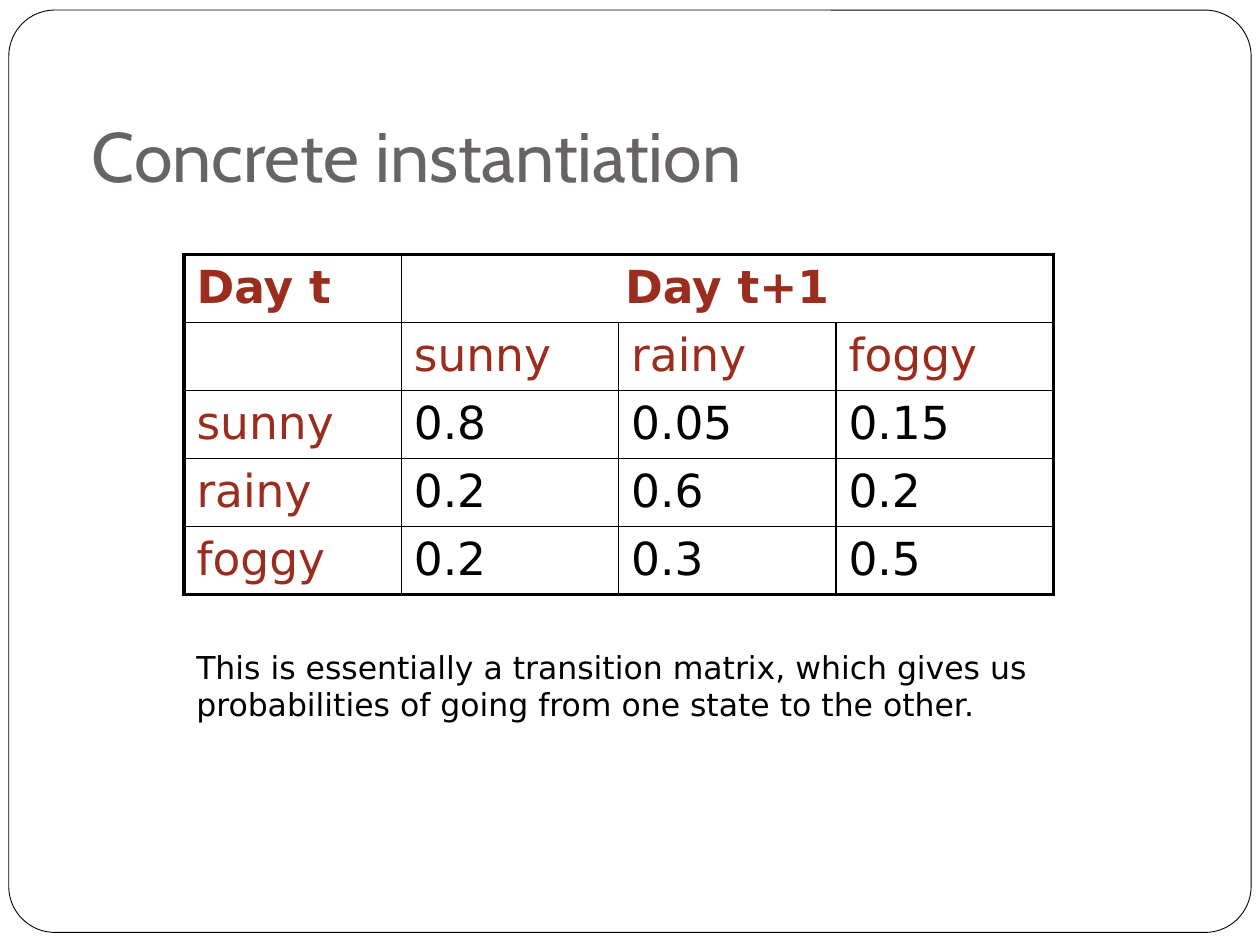
from lxml.etree import SubElement
from pptx import Presentation
from pptx.dml.color import RGBColor
from pptx.enum.shapes import MSO_SHAPE
from pptx.enum.text import MSO_ANCHOR, MSO_AUTO_SIZE, PP_ALIGN
from pptx.oxml.ns import qn
from pptx.util import Inches, Pt

BLACK, WHITE, GREY, RED = "000000", "FFFFFF", "696464", "9B2D1F"
BODY_FONT, TITLE_FONT = "DejaVu Sans", "Cabin"
OUTER_LINE, INNER_LINE = 2.25, 1
WEATHER_TABLE = [
    ["Day t", "Day t+1", "", ""],
    ["", "sunny", "rainy", "foggy"],
    ["sunny", "0.8", "0.05", "0.15"],
    ["rainy", "0.2", "0.6", "0.2"],
    ["foggy", "0.2", "0.3", "0.5"],
]


def colour(value):
    return RGBColor.from_string(value)


def style_text(text_frame, font_name, size, text_colour, bold=False, align=PP_ALIGN.LEFT):
    for paragraph in text_frame.paragraphs:
        paragraph.alignment = align
        for run in paragraph.runs:
            run.font.name = font_name
            run.font.size = Pt(size)
            run.font.bold = bold
            run.font.color.rgb = colour(text_colour)


def add_frame(slide, left, top, width, height):
    shape = slide.shapes.add_shape(MSO_SHAPE.ROUNDED_RECTANGLE, left, top, width, height)
    shape.adjustments[0] = 0.05
    shape.shadow.inherit = False
    shape.fill.solid()
    shape.fill.fore_color.rgb = colour(WHITE)
    shape.line.color.rgb = colour(BLACK)
    shape.line.width = Pt(0.5)
    # Send behind the title
    slide.shapes.element.insert(2, shape.element)


def place_title(slide, left, top, width, height):
    title = slide.shapes.title
    title.left, title.top, title.width, title.height = left, top, width, height
    text_frame = title.text_frame
    text_frame.text = "Concrete instantiation"
    text_frame.auto_size = MSO_AUTO_SIZE.NONE
    text_frame.vertical_anchor = MSO_ANCHOR.BOTTOM
    text_frame.margin_bottom = Inches(0.1)
    style_text(text_frame, TITLE_FONT, 40, GREY)


def set_borders(cell, widths):
    properties = cell._tc.get_or_add_tcPr()
    for side, width in zip("LRTB", widths):
        line = SubElement(properties, qn(f"a:ln{side}"), w=str(Pt(width)))
        fill = SubElement(line, qn("a:solidFill"))
        SubElement(fill, qn("a:srgbClr"), val=BLACK)


def add_weather_table(slide, left, top, width, height):
    row_count, column_count = len(WEATHER_TABLE), len(WEATHER_TABLE[0])
    table = slide.shapes.add_table(row_count, column_count, left, top, width, height).table
    table.first_row = table.horz_banding = False
    table.cell(0, 1).merge(table.cell(0, column_count - 1))

    for row, texts in enumerate(WEATHER_TABLE):
        for column, text in enumerate(texts):
            cell = table.cell(row, column)
            last_column = column + (cell.span_width if cell.is_merge_origin else 1)
            on_edge = (column == 0, last_column == column_count,
                       row == 0, row == row_count - 1)
            set_borders(cell, [OUTER_LINE if edge else INNER_LINE for edge in on_edge])
            cell.fill.background()
            if text:
                cell.text_frame.text = text
                is_label = row < 2 or column == 0
                style_text(cell.text_frame, BODY_FONT, 26, RED if is_label else BLACK,
                           bold=row == 0,
                           align=PP_ALIGN.CENTER if cell.is_merge_origin else PP_ALIGN.LEFT)


def add_explanation(slide, left, top, width, height):
    text_frame = slide.shapes.add_textbox(left, top, width, height).text_frame
    text_frame.word_wrap = True
    text_frame.text = ("This is essentially a transition matrix, which gives us "
                       "probabilities of going from one state to the other.")
    style_text(text_frame, BODY_FONT, 18, BLACK)


def main():
    presentation = Presentation()
    presentation.slide_width, presentation.slide_height = Inches(10), Inches(7.5)
    slide = presentation.slides.add_slide(presentation.slide_layouts[5])
    add_frame(slide, Inches(0.07), Inches(0.08), Inches(9.86), Inches(7.32))
    place_title(slide, Inches(0.63), Inches(0.33), Inches(8.75), Inches(1.33))
    add_weather_table(slide, Inches(1.46), Inches(2.02), Inches(6.9), Inches(2.7))
    add_explanation(slide, Inches(1.46), Inches(5.09), Inches(7.5), Inches(1.01))
    presentation.save("out.pptx")


if __name__ == "__main__":
    main()
